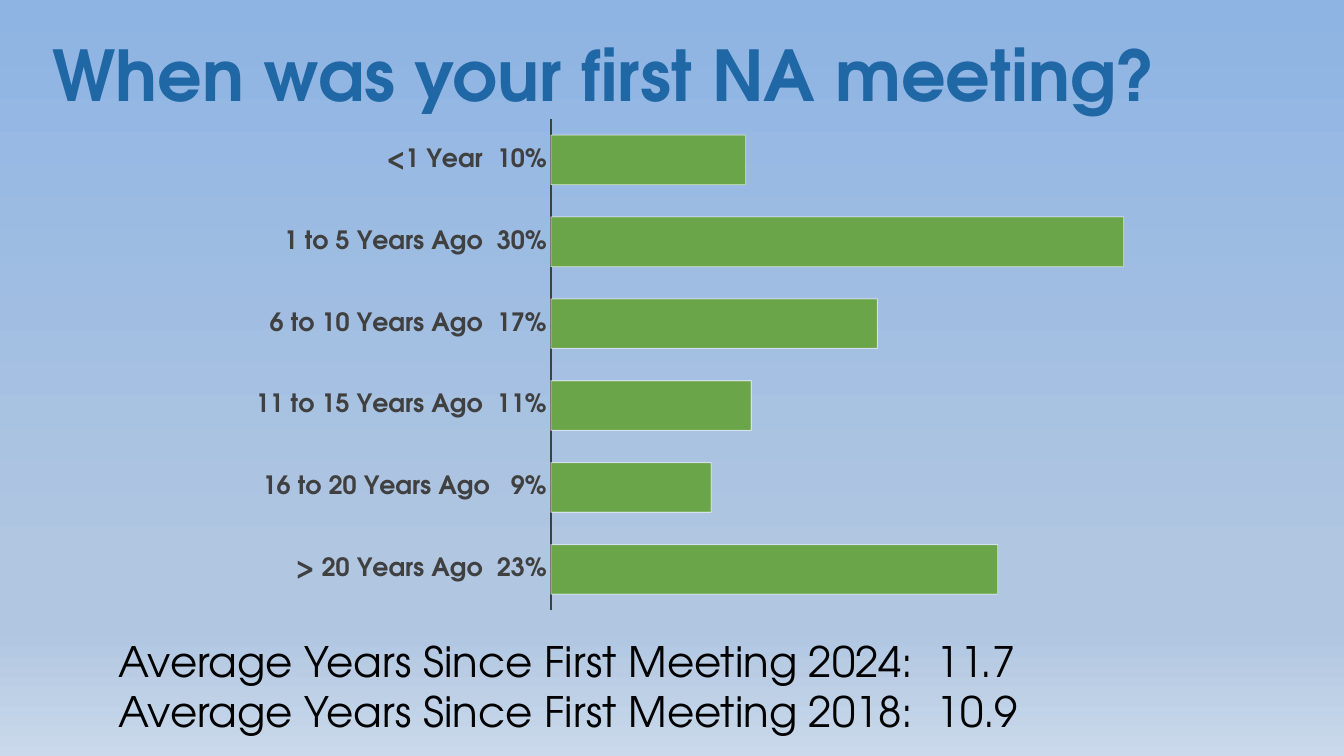
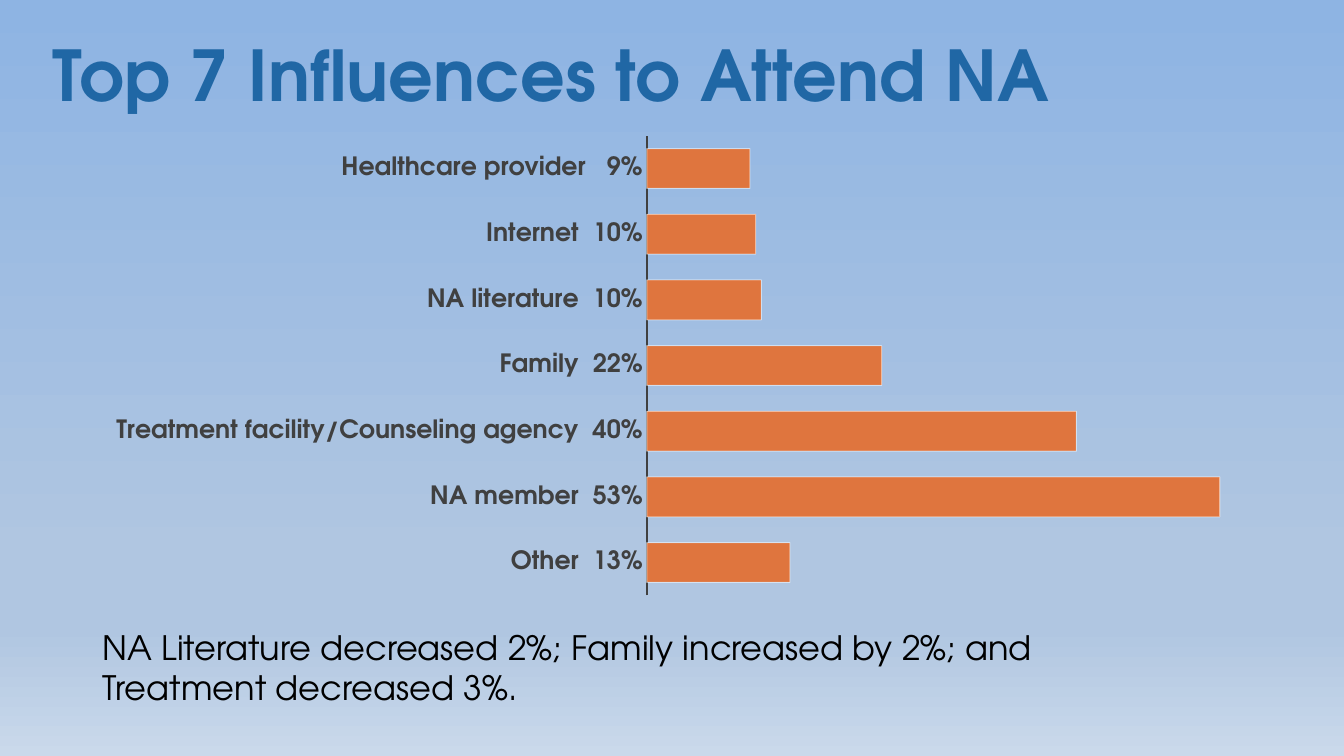
from copy import deepcopy

from lxml.etree import SubElement
from pptx import Presentation
from pptx.chart.data import CategoryChartData
from pptx.dml.color import RGBColor
from pptx.enum.chart import XL_CHART_TYPE, XL_TICK_MARK
from pptx.enum.text import MSO_ANCHOR
from pptx.oxml import parse_xml
from pptx.oxml.ns import nsdecls, qn
from pptx.util import Cm, Pt

COLORS = {
    "title": "2067A5",
    "text": "000000",
    "axis": "404040",
    "green": "6BA549",
    "orange": "DF753E",
    "outline": "FFFFFF",
}
BACKGROUND = [(0, "8EB4E3"), (74, "B0C6E1"), (83, "B0C6E1"), (100, "CAD9EB")]
FONT = "TeX Gyre Adventor"
BAR_LENGTH = 14.44  # cm, the bar for the value 100


def rgb(name):
    return RGBColor.from_string(COLORS[name])


class Deck:
    def __init__(self):
        self.prs = Presentation()
        self.prs.slide_width, self.prs.slide_height = Cm(33.87), Cm(19.05)
        self.slide = None
        self.set_background()

    def set_background(self):
        """Put the shared gradient on the master."""
        master = self.prs.slide_master
        fill = master.background.fill
        fill.gradient()
        fill.gradient_angle = 270
        stops = next(master.element.iter(qn("a:gsLst")))
        model = deepcopy(stops[0])
        for old in list(stops):
            stops.remove(old)
        for position, color in BACKGROUND:
            stop = deepcopy(model)
            stop.set("pos", str(position * 1000))
            for child in list(stop):
                stop.remove(child)
            SubElement(stop, qn("a:srgbClr"), val=color)
            stops.append(stop)

    def add_slide(self, title):
        self.slide = self.prs.slides.add_slide(self.prs.slide_layouts[6])
        tf = self.text([title], 1.07, 0.64, 31.95, 3.18, 50, "title", True)
        tf.margin_top = 0
        p = tf.paragraphs[0]
        p.line_spacing = 1.07
        p.space_after = Pt(8)

    def text(self, lines, x, y, w, h, size, color="text", bold=False):
        box = self.slide.shapes.add_textbox(Cm(x), Cm(y), Cm(w), Cm(h))
        tf = box.text_frame
        tf.word_wrap = True
        tf.vertical_anchor = MSO_ANCHOR.TOP
        for i, line in enumerate(lines):
            p = tf.add_paragraph() if i else tf.paragraphs[0]
            p.text = line
            self.style(p.font, size, color, bold)
        return tf

    def style(self, font, size, color, bold):
        font.name, font.size, font.bold = FONT, Pt(size), bold
        font.color.rgb = rgb(color)

    def bar_chart(self, bars, color, x, y, w, h, axis_x):
        """Draw horizontal bars that start at axis_x on the slide."""
        data = CategoryChartData()
        data.categories = [label for label, _ in bars]
        data.add_series("Series 1", [value for _, value in bars])
        chart = self.slide.shapes.add_chart(
            XL_CHART_TYPE.BAR_CLUSTERED, Cm(x), Cm(y), Cm(w), Cm(h), data
        ).chart
        chart.has_title = chart.has_legend = False
        chart.font.name, chart.font.size = "Calibri", Pt(10)
        chart.font.color.rgb = rgb("text")

        # Axes
        axis = chart.category_axis
        axis.reverse_order = True
        axis.has_major_gridlines = False
        axis.major_tick_mark = axis.minor_tick_mark = XL_TICK_MARK.NONE
        self.style(axis.tick_labels.font, 18, "axis", True)
        axis.format.line.color.rgb = rgb("axis")
        axis.format.line.width = Pt(1.5)
        values = chart.value_axis
        values.minimum_scale, values.maximum_scale = 0, 100
        values.has_major_gridlines = False
        values.visible = False

        # Bars
        plot = chart.plots[0]
        plot.gap_width = 65
        plot.vary_by_categories = False
        fmt = plot.series[0].format
        fmt.fill.solid()
        fmt.fill.fore_color.rgb = rgb(color)
        fmt.line.color.rgb = rgb("outline")
        fmt.line.width = Pt(0.75)
        outline = next(fmt.line._get_or_add_ln().iter(qn("a:srgbClr")))
        SubElement(outline, qn("a:alpha"), val="50000")

        # Plot area, as fractions of the chart
        area = plot._element.getparent()
        for old in area.findall(qn("c:layout")):
            area.remove(old)
        parts = {"x": (axis_x - x) / w, "y": 0.02, "w": BAR_LENGTH / w, "h": 0.96}
        sizes = "".join(f'<c:{k} val="{v:.4f}"/>' for k, v in parts.items())
        area.insert(0, parse_xml(
            f'<c:layout {nsdecls("c")}><c:manualLayout>'
            '<c:layoutTarget val="inner"/>'
            '<c:xMode val="edge"/><c:yMode val="edge"/>'
            f"{sizes}</c:manualLayout></c:layout>"
        ))


def main():
    deck = Deck()

    # First meeting
    deck.add_slide("When was your first NA meeting?")
    deck.bar_chart([
        ("<1 Year  10%", 34),
        ("1 to 5 Years Ago  30%", 100),
        ("6 to 10 Years Ago  17%", 57),
        ("11 to 15 Years Ago  11%", 35),
        ("16 to 20 Years Ago   9%", 28),
        ("> 20 Years Ago  23%", 78),
    ], "green", 5.92, 2.74, 25.2, 12.9, axis_x=13.88)
    deck.text([
        "Average Years Since First Meeting 2024:  11.7",
        "Average Years Since First Meeting 2018:  10.9",
    ], 2.74, 15.88, 26.67, 2.82, 30)

    # Influences
    deck.add_slide("Top 7 Influences to Attend NA")
    deck.bar_chart([
        ("Healthcare provider   9%", 18),
        ("Internet  10%", 19),
        ("NA literature  10%", 20),
        ("Family  22%", 41),
        ("Treatment facility/Counseling agency  40%", 75),
        ("NA member  53%", 100),
        ("Other  13%", 25),
    ], "orange", 2.34, 3.18, 30.91, 12.07, axis_x=16.3)
    deck.text([
        "NA Literature decreased 2%; Family increased by 2%; and\n"
        "Treatment decreased 3%.",
    ], 2.34, 15.67, 28.78, 2.31, 24)

    deck.prs.save("out.pptx")


if __name__ == "__main__":
    main()
